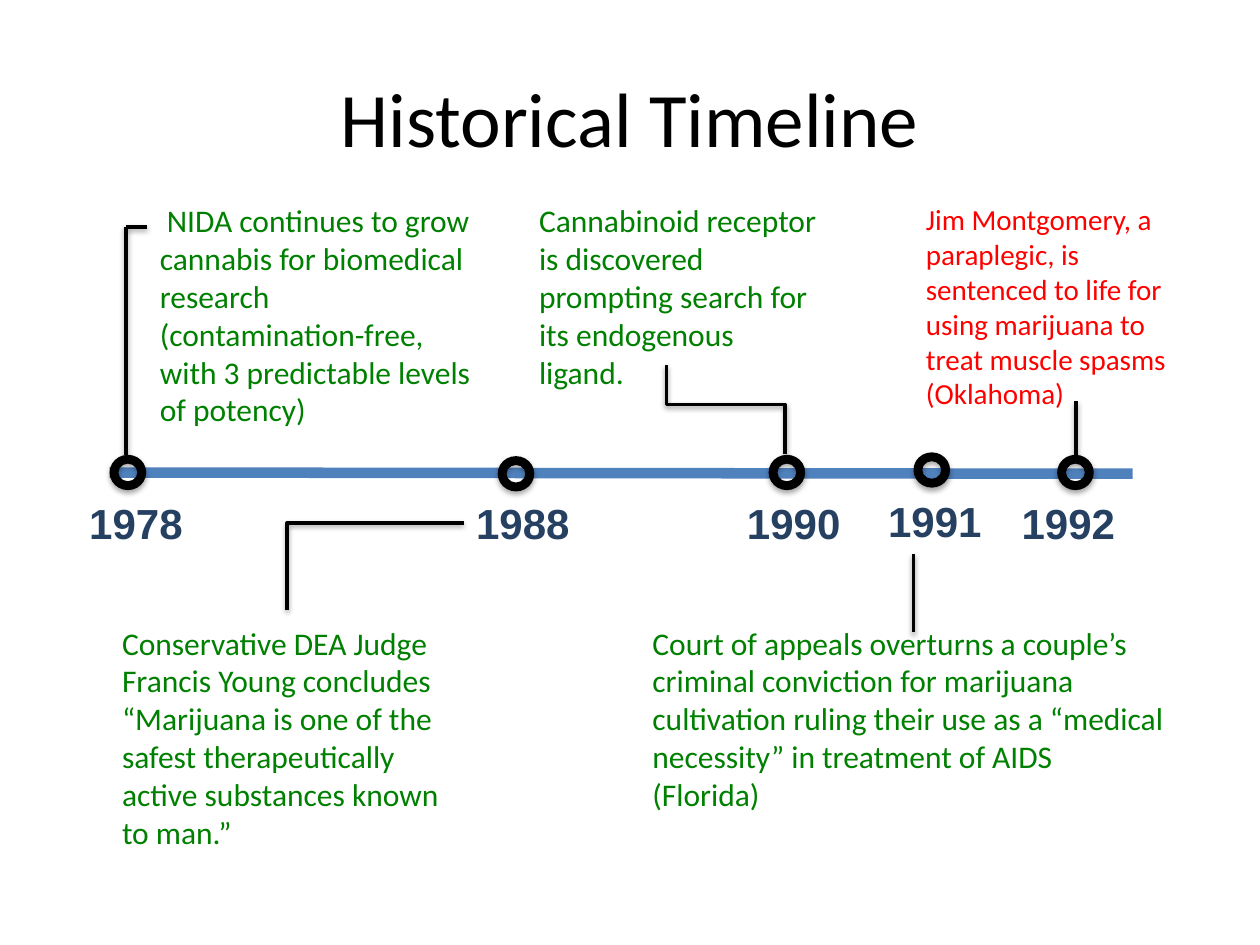
import pptx
import pptx.util
import pptx.dml.color
import pptx.enum.shapes
import pptx.enum.text
import pptx.oxml
import pptx.oxml.ns

Inches = pptx.util.Inches
Pt = pptx.util.Pt
GREEN, RED, NAVY, BLACK, BLUE = "008000", "FF0000", "254061", "000000", "4F81BD"

# Left, top and year of each marker on the axis
EVENTS = [(0.87, 3.61, "1978"), (3.95, 3.62, "1988"), (6.1, 3.61, "1990"),
          (7.25, 3.59, "1991"), (8.39, 3.61, "1992")]
YEAR_BOXES = [(0.61, 3.9), (3.68, 3.9), (5.83, 3.9), (6.95, 3.88), (8.01, 3.9)]

# Box, colour, size and paragraphs (lists of runs) of each note
NOTES = [
    ((1.17, 1.55, 2.68, 1.8), GREEN, 18,
     [[" ", "NIDA continues to grow cannabis for biomedical research "
       "(contamination-free, with 3 predictable levels of potency)"]]),
    ((0.87, 4.9, 2.71, 1.78), GREEN, 18,
     [["Conservative DEA Judge Francis Young concludes “Marijuana is one of the "
       "safest therapeutically active substances known to man.”"]]),
    ((4.18, 1.55, 2.4, 1.46), GREEN, 18,
     [["Cannabinoid receptor is discovered prompting search for its "
       "endogenous ligand."]]),
    ((5.08, 4.9, 4.34, 1.49), GREEN, 18,
     [["Court of appeals overturns a couple’s criminal conviction for marijuana "
       "cultivation ruling their use as a “medical necessity” in treatment of AIDS"],
      ["(Florida)"]]),
    ((7.25, 1.55, 2.39, 1.63), RED, 16.6,
     [["Jim Montgomery, a paraplegic, is sentenced to life for using marijuana "
       "to treat muscle spasms"], ["(Oklahoma)"]]),
]


def rgb(color):
    return pptx.dml.color.RGBColor.from_string(color)


def set_shadow(s, alpha=None, dist=0):
    """Replace the theme shadow; without alpha there is none."""
    spPr = s._element.spPr
    for old in spPr.findall(pptx.oxml.ns.qn("a:effectLst")):
        spPr.remove(old)
    shadow = "" if alpha is None else (
        f'<a:outerShdw blurRad="{Pt(3.1)}" dist="{Pt(dist)}" dir="5400000" '
        f'rotWithShape="0"><a:srgbClr val="{BLACK}"><a:alpha val="{alpha * 1000}"/>'
        '</a:srgbClr></a:outerShdw>')
    spPr.append(pptx.oxml.parse_xml(
        f'<a:effectLst {pptx.oxml.ns.nsdecls("a")}>{shadow}</a:effectLst>'))


def set_line(s, color=BLACK, width=2):
    s.line.color.rgb = rgb(color)
    s.line.width = Pt(width)


def add_text(shapes, box, paragraphs, size, color, font="Calibri", bold=False):
    s = shapes.add_textbox(*map(Inches, box))
    tf = s.text_frame
    tf.word_wrap = True
    for i, runs in enumerate(paragraphs):
        p = tf.add_paragraph() if i else tf.paragraphs[0]
        for text in runs:
            r = p.add_run()
            r.text = text
            r.font.size = Pt(size)
            r.font.name = font
            r.font.bold = bold
            r.font.color.rgb = rgb(color)
    return tf


def add_line(shapes, start, end, color=BLACK, width=2, shadow=True):
    s = shapes.add_connector(pptx.enum.shapes.MSO_CONNECTOR.STRAIGHT,
                             *map(Inches, start + end))
    set_line(s, color, width)
    set_shadow(s, 38 if shadow else None, 1.6)


def add_elbow(shapes, points):
    points = [(Inches(x), Inches(y)) for x, y in points]
    builder = shapes.build_freeform(*points[0])
    builder.add_line_segments(points[1:], close=False)
    s = builder.convert_to_shape()
    s.fill.background()
    set_line(s)
    set_shadow(s, 38, 1.6)


def add_marker(shapes, left, top):
    s = shapes.add_shape(pptx.enum.shapes.MSO_SHAPE.DONUT,
                         *map(Inches, (left, top, 0.29, 0.28)))
    s.fill.solid()
    s.fill.fore_color.rgb = rgb(BLACK)
    s.line.fill.background()
    set_shadow(s, 35, 1.8)


def main():
    prs = pptx.Presentation()
    prs.slide_width, prs.slide_height = Inches(10), Inches(7.5)
    shapes = prs.slides.add_slide(prs.slide_layouts[6]).shapes

    # Title
    tf = add_text(shapes, (0.5, 0.3, 9, 1.25), [["Historical Timeline"]], 44, BLACK)
    tf.vertical_anchor = pptx.enum.text.MSO_ANCHOR.MIDDLE
    tf.paragraphs[0].alignment = pptx.enum.text.PP_ALIGN.CENTER

    # Axis and markers
    add_line(shapes, (0.87, 3.75), (8.99, 3.76), BLUE, 6, shadow=False)
    for left, top, _ in EVENTS:
        add_marker(shapes, left, top)

    # Notes and years
    for box, color, size, paragraphs in NOTES:
        add_text(shapes, box, paragraphs, size, color)
    for (_, _, year), (left, top) in zip(EVENTS, YEAR_BOXES):
        tf = add_text(shapes, (left, top, 1.12, 0.5), [[year]], 24, NAVY, "Arial", True)
        tf.auto_size = pptx.enum.text.MSO_AUTO_SIZE.SHAPE_TO_FIT_TEXT

    # Leaders from the notes to the axis
    bracket = shapes.add_group_shape().shapes
    add_line(bracket, (1, 3.61), (1, 1.8))
    add_line(bracket, (1, 1.8), (1.17, 1.8))
    add_line(shapes, (7.25, 4.4), (7.25, 5.02))
    add_line(shapes, (8.54, 3.62), (8.54, 3.18))
    add_elbow(shapes, [(5.29, 2.9), (5.29, 3.21), (6.23, 3.21), (6.23, 3.6)])
    add_elbow(shapes, [(3.68, 4.15), (2.28, 4.15), (2.28, 4.84)])

    prs.save("out.pptx")


if __name__ == "__main__":
    main()
